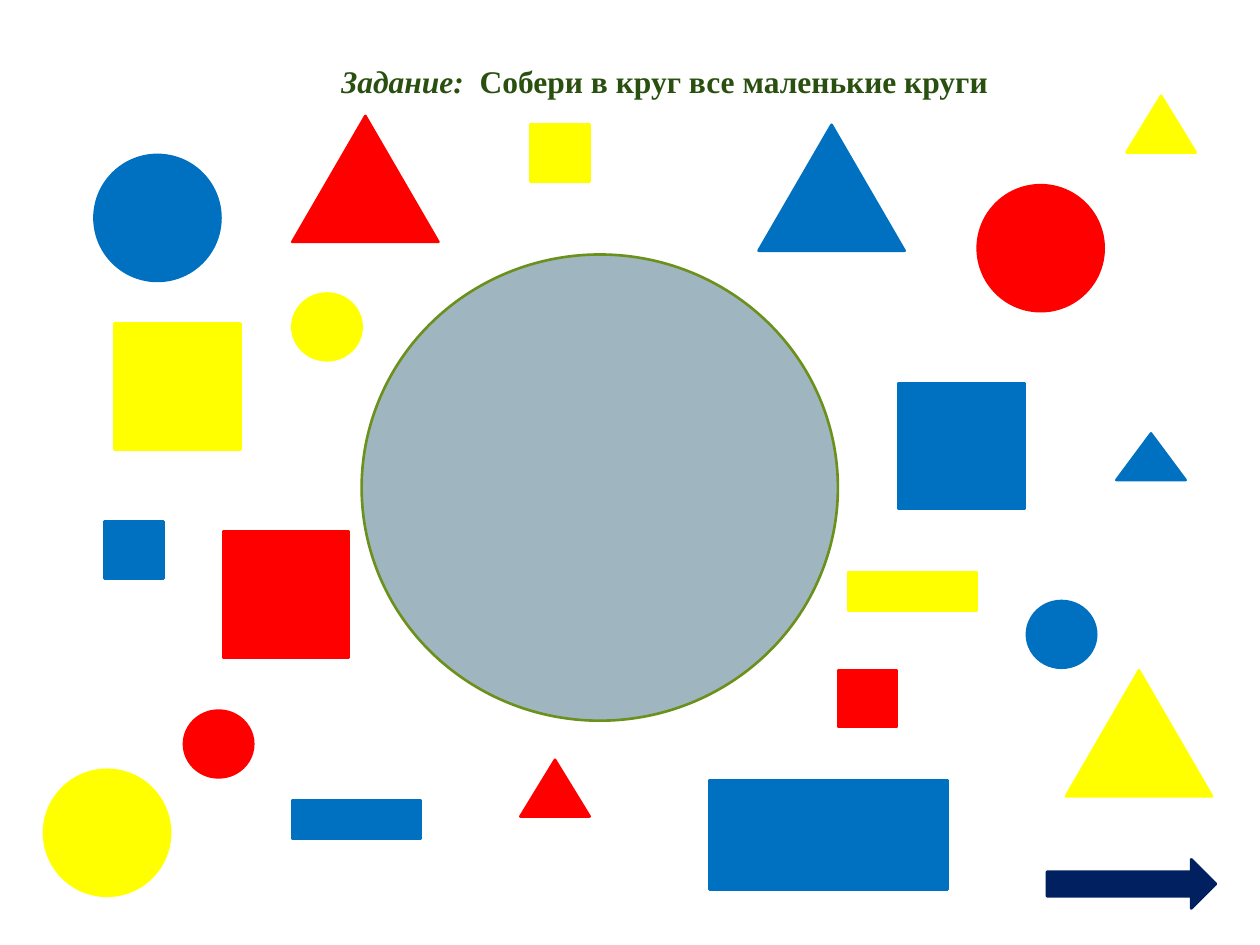
from typing import NamedTuple

from pptx import Presentation
from pptx.dml.color import RGBColor
from pptx.enum.shapes import MSO_SHAPE
from pptx.enum.text import MSO_AUTO_SIZE, PP_ALIGN
from pptx.slide import Slide
from pptx.util import Inches, Pt

BLUE = RGBColor(0x00, 0x70, 0xC0)
RED = RGBColor(0xFF, 0x00, 0x00)
YELLOW = RGBColor(0xFF, 0xFF, 0x00)
NAVY = RGBColor(0x00, 0x20, 0x60)
GREY = RGBColor(0x9F, 0xB6, 0xC0)
OLIVE = RGBColor(0x6B, 0x90, 0x1C)
DARK_GREEN = RGBColor(0x2A, 0x50, 0x10)


class Kind(NamedTuple):
    outline: MSO_SHAPE
    width: float
    height: float


class Figure(NamedTuple):
    kind: Kind
    left: float
    top: float
    fill: RGBColor


BASKET = Kind(MSO_SHAPE.OVAL, 3.78, 3.7)
BIG_CIRCLE = Kind(MSO_SHAPE.OVAL, 1, 1)
SMALL_CIRCLE = Kind(MSO_SHAPE.OVAL, 0.55, 0.53)
BIG_SQUARE = Kind(MSO_SHAPE.RECTANGLE, 1, 1)
SMALL_SQUARE = Kind(MSO_SHAPE.RECTANGLE, 0.47, 0.45)
BIG_BAR = Kind(MSO_SHAPE.RECTANGLE, 1.89, 0.87)
SMALL_BAR = Kind(MSO_SHAPE.RECTANGLE, 1.02, 0.31)
BIG_TRIANGLE = Kind(MSO_SHAPE.ISOSCELES_TRIANGLE, 1.16, 1)
SMALL_TRIANGLE = Kind(MSO_SHAPE.ISOSCELES_TRIANGLE, 0.55, 0.45)
LOW_TRIANGLE = Kind(MSO_SHAPE.ISOSCELES_TRIANGLE, 0.55, 0.37)
NEXT_ARROW = Kind(MSO_SHAPE.RIGHT_ARROW, 1.34, 0.39)

FIGURES = [
    Figure(BIG_CIRCLE, 0.75, 1.23, BLUE),
    Figure(SMALL_CIRCLE, 1.46, 5.64, RED),
    Figure(SMALL_SQUARE, 0.83, 4.14, BLUE),
    Figure(SMALL_BAR, 2.32, 6.35, BLUE),
    Figure(BIG_TRIANGLE, 2.32, 0.92, RED),
    Figure(BIG_SQUARE, 1.77, 4.22, RED),
    Figure(BIG_SQUARE, 0.91, 2.57, YELLOW),
    Figure(BIG_CIRCLE, 0.35, 6.11, YELLOW),
    Figure(SMALL_CIRCLE, 2.32, 2.33, YELLOW),
    Figure(SMALL_CIRCLE, 8.15, 4.77, BLUE),
    Figure(BIG_CIRCLE, 7.76, 1.47, RED),
    Figure(BIG_SQUARE, 7.13, 3.04, BLUE),
    Figure(BIG_BAR, 5.63, 6.19, BLUE),
    Figure(BIG_TRIANGLE, 6.02, 0.99, BLUE),
    Figure(LOW_TRIANGLE, 8.86, 3.44, BLUE),
    Figure(SMALL_TRIANGLE, 4.13, 6.03, RED),
    Figure(SMALL_SQUARE, 6.65, 5.32, RED),
    Figure(SMALL_SQUARE, 4.21, 0.99, YELLOW),
    Figure(BIG_TRIANGLE, 8.46, 5.32, YELLOW),
    Figure(SMALL_TRIANGLE, 8.94, 0.76, YELLOW),
    Figure(SMALL_BAR, 6.73, 4.54, YELLOW),
    Figure(NEXT_ARROW, 8.31, 6.82, NAVY),
]


def draw_figure(slide: Slide, figure: Figure, border: RGBColor) -> None:
    kind = figure.kind
    drawn = slide.shapes.add_shape(
        kind.outline,
        Inches(figure.left), Inches(figure.top),
        Inches(kind.width), Inches(kind.height),
    )
    drawn.shadow.inherit = False
    drawn.fill.solid()
    drawn.fill.fore_color.rgb = figure.fill
    drawn.line.color.rgb = border
    drawn.line.width = Pt(1.5)


def draw_task(slide: Slide) -> None:
    task = slide.shapes.add_textbox(
        Inches(1.77), Inches(0.44), Inches(7.01), Inches(0.4)
    ).text_frame
    task.word_wrap = True
    task.auto_size = MSO_AUTO_SIZE.SHAPE_TO_FIT_TEXT
    sentence = task.paragraphs[0]
    sentence.alignment = PP_ALIGN.CENTER
    for wording, italic in (
        ("Задание:  ", True),
        ("Собери в круг все маленькие круги", False),
    ):
        part = sentence.add_run()
        part.text = wording
        part.font.name = "Times New Roman"
        part.font.size = Pt(18)
        part.font.bold = True
        part.font.italic = italic
        part.font.color.rgb = DARK_GREEN


def main() -> None:
    presentation = Presentation()
    presentation.slide_width = Inches(10)
    presentation.slide_height = Inches(7.5)
    slide = presentation.slides.add_slide(presentation.slide_layouts[6])
    draw_task(slide)
    draw_figure(slide, Figure(BASKET, 2.87, 2.02, GREY), OLIVE)
    for figure in FIGURES:
        draw_figure(slide, figure, figure.fill)
    presentation.save("out.pptx")


if __name__ == "__main__":
    main()
